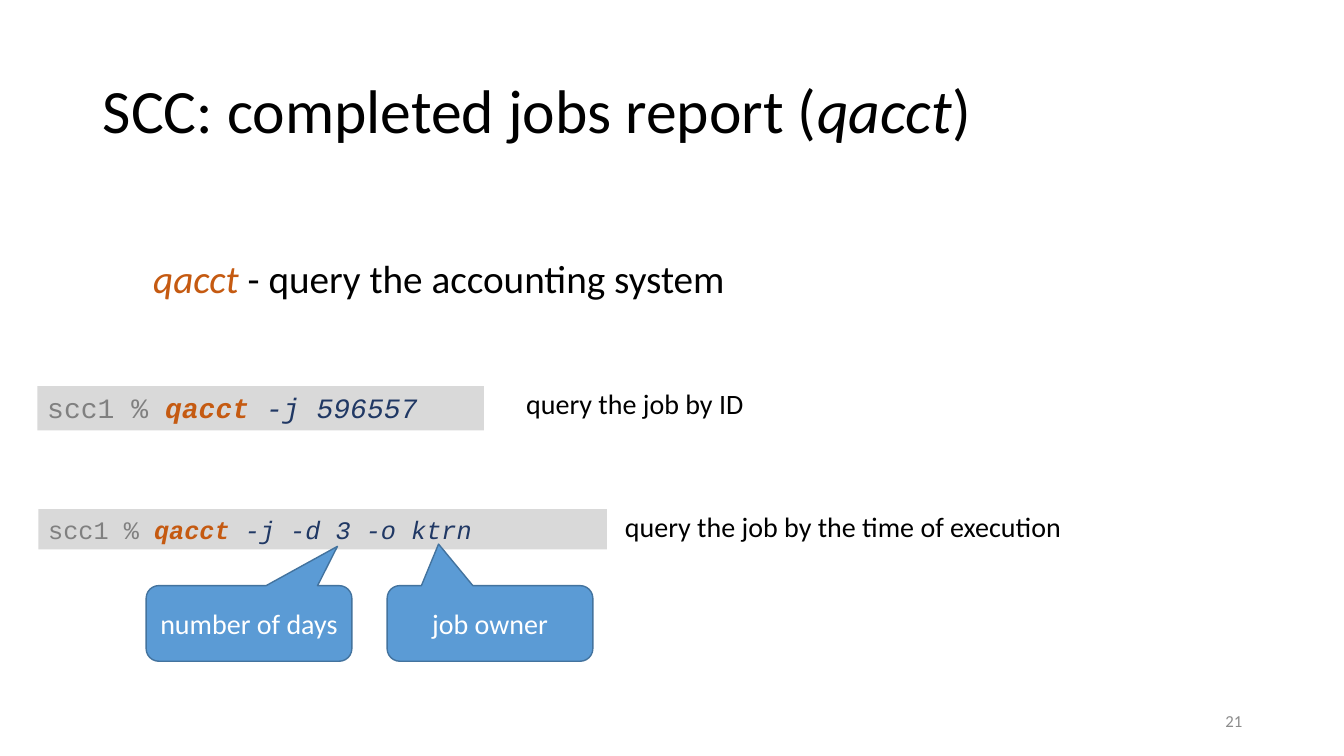
from dataclasses import dataclass
from pptx import Presentation
from pptx.dml.color import RGBColor
from pptx.enum import shapes, text
from pptx.util import Inches, Pt


@dataclass(frozen=True)
class Theme:
    body: str = "Calibri"
    mono: str = "Courier New"
    black: str = "000000"
    white: str = "FFFFFF"
    gray: str = "808080"
    pale: str = "8C8C8C"
    panel: str = "D9D9D9"
    orange: str = "C55A11"
    navy: str = "203864"
    blue: str = "5B9BD5"
    edge: str = "43739E"
    head: int = 44
    lead: int = 28
    note: int = 20
    code: int = 18
    foot: int = 12


T = Theme()
LEFT, CENTER, RIGHT = text.PP_ALIGN.LEFT, text.PP_ALIGN.CENTER, text.PP_ALIGN.RIGHT
TOP, MIDDLE = text.MSO_ANCHOR.TOP, text.MSO_ANCHOR.MIDDLE


def inch(box):
    return [Inches(v) for v in box]


def write(shape, runs, size, face=T.body, align=LEFT, anchor=TOP, space=1.0, inset=0.1):
    """Fill a shape with one paragraph of (words, colour, format) runs."""
    frame = shape.text_frame
    form = dict(word_wrap=True, auto_size=text.MSO_AUTO_SIZE.NONE,
                vertical_anchor=anchor, margin_left=Inches(inset))
    for key, value in form.items():
        setattr(frame, key, value)
    para = frame.paragraphs[0]
    para.alignment, para.line_spacing = align, space
    for words, color, style in runs:
        run = para.add_run()
        run.text = words
        run.font.color.rgb = RGBColor.from_string(color)
        for key, value in dict(name=face, size=Pt(size), **style).items():
            setattr(run.font, key, value)


def label(slide, box, runs, size, **form):
    write(slide.shapes.add_textbox(*inch(box)), runs, size, **form)


def block(slide, kind, box, fill):
    shape = slide.shapes.add_shape(kind, *inch(box))
    shape.shadow.inherit = False
    shape.fill.solid()
    shape.fill.fore_color.rgb = RGBColor.from_string(fill)
    shape.line.fill.background()
    return shape


def title(slide, box):
    head = slide.shapes.title
    head.left, head.top, head.width, head.height = inch(box)
    runs = [("SCC: completed jobs report (", T.black, {}),
            ("qacct", T.black, {"italic": True}), (")", T.black, {})]
    write(head, runs, T.head, anchor=MIDDLE, space=0.9)


def command(slide, box, args, size, hint, gap, width):
    """Place a shell line, with its hint starting a gap to the right."""
    x, y, w, h = box
    bar = block(slide, shapes.MSO_SHAPE.RECTANGLE, box, T.panel)
    runs = [("scc1 % ", T.gray, {}),
            ("qacct", T.orange, {"bold": True, "italic": True}),
            (args, T.navy, {"italic": True})]
    write(bar, runs, size, face=T.mono)
    label(slide, (x + w + gap, y + 0.02, width, 0.39), [(hint, T.black, {})],
          T.note, space=0.8)


def callout(slide, box, words, tip):
    """Place a bubble whose tip is a share of its size from its centre."""
    bubble = block(slide, shapes.MSO_SHAPE.ROUNDED_RECTANGULAR_CALLOUT, box, T.blue)
    bubble.line.color.rgb = RGBColor.from_string(T.edge)
    bubble.line.width = Pt(1)
    bubble.adjustments[0], bubble.adjustments[1] = tip
    write(bubble, [(words, T.white, {})], T.note, align=CENTER, anchor=MIDDLE)


def main():
    deck = Presentation()
    deck.slide_width, deck.slide_height = Inches(13.33), Inches(7.5)
    slide = deck.slides.add_slide(deck.slide_layouts[5])
    title(slide, (0.92, 0.4, 11.5, 1.45))
    lead = [("qacct", T.orange, {"italic": True}),
            (" - query the accounting system", T.black, {})]
    label(slide, (0.92, 2.53, 11.5, 0.91), lead, T.lead, space=0.9, inset=0.6)
    command(slide, (0.37, 3.83, 4.43, 0.44), " -j 596557", 20,
            "query the job by ID", 0.32, 2.77)
    command(slide, (0.38, 5.05, 5.64, 0.4), " -j -d 3 -o ktrn", T.code,
            "query the job by the time of execution", 0.08, 5.17)
    tips = [("number of days", (0.43, -1.02)), ("job owner", (-0.25, -1.05))]
    for i, (words, tip) in enumerate(tips):
        callout(slide, (1.45 + 2.39 * i, 5.81, 2.04, 0.75), words, tip)
    label(slide, (9.42, 6.95, 3, 0.4), [("21", T.pale, {})], T.foot,
          align=RIGHT, anchor=MIDDLE)
    deck.save("out.pptx")


if __name__ == "__main__":
    main()
